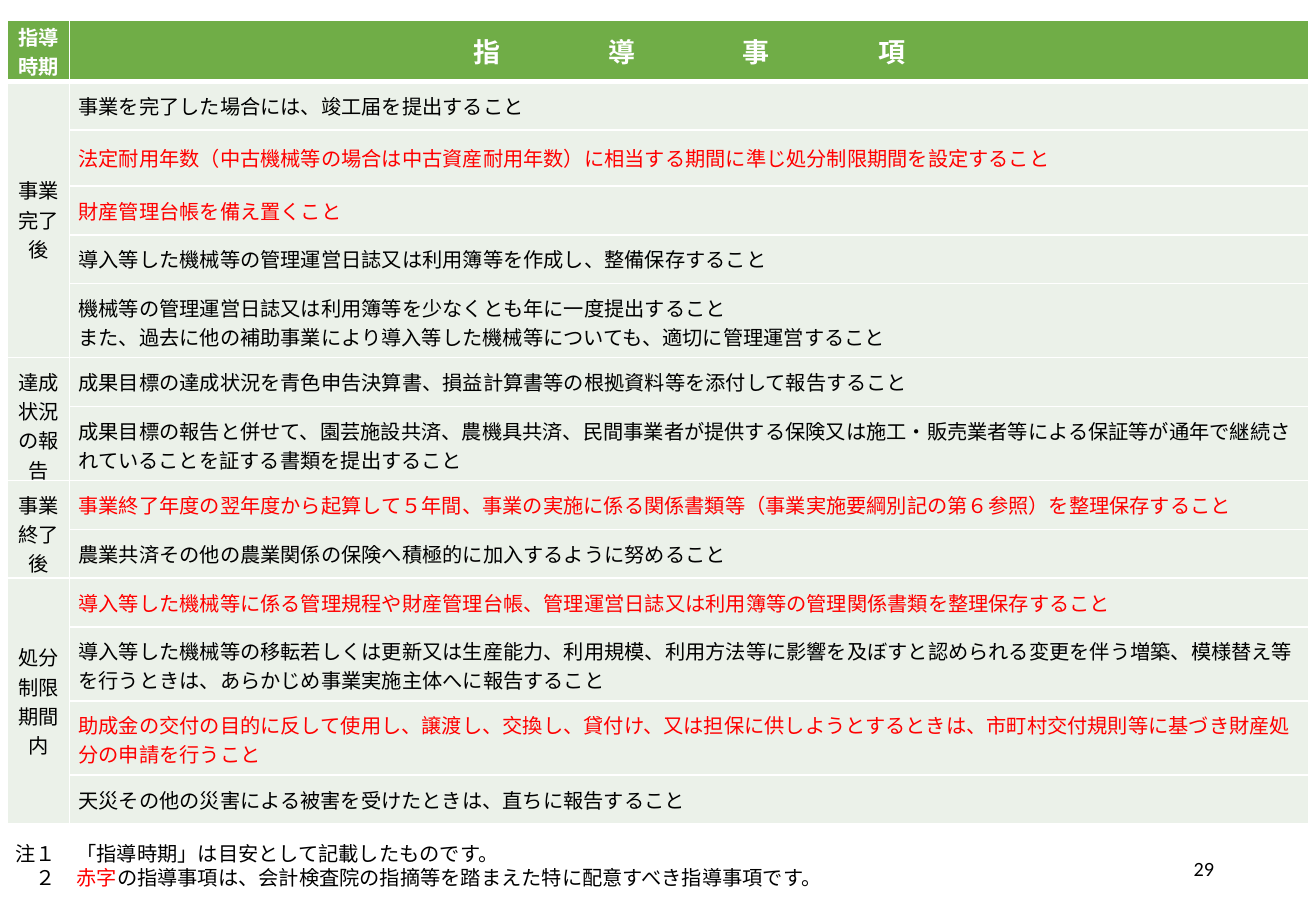
from lxml.etree import SubElement
from pptx import Presentation
from pptx.dml.color import RGBColor
from pptx.enum.text import MSO_ANCHOR, PP_ALIGN
from pptx.oxml.ns import qn
from pptx.util import Cm, Pt

BLACK, RED, WHITE = "000000", "FF0000", "FFFFFF"
GREEN, PALE = "70AD47", "EBF1E9"
JAPANESE = "Noto Sans CJK JP"
ONE_LINE, TWO_LINES = 1.02, 1.55

SECTIONS = [
    (["事業完了後"], [
        ("事業を完了した場合には、竣工届を提出すること", BLACK, ONE_LINE),
        ("法定耐用年数（中古機械等の場合は中古資産耐用年数）に相当する期間に準じ処分制限期間を設定すること", RED, 1.17),
        ("財産管理台帳を備え置くこと", RED, ONE_LINE),
        ("導入等した機械等の管理運営日誌又は利用簿等を作成し、整備保存すること", BLACK, ONE_LINE),
        ("機械等の管理運営日誌又は利用簿等を少なくとも年に一度提出すること\n"
         "また、過去に他の補助事業により導入等した機械等についても、適切に管理運営すること", BLACK, TWO_LINES),
    ]),
    (["達成状況", "の報告"], [
        ("成果目標の達成状況を青色申告決算書、損益計算書等の根拠資料等を添付して報告すること", BLACK, ONE_LINE),
        ("成果目標の報告と併せて、園芸施設共済、農機具共済、民間事業者が提供する保険又は施工・販売業者等による"
         "保証等が通年で継続されていることを証する書類を提出すること", BLACK, TWO_LINES),
    ]),
    (["事業", "終了後"], [
        ("事業終了年度の翌年度から起算して５年間、事業の実施に係る関係書類等（事業実施要綱別記の第６参照）を整理保存すること", RED, ONE_LINE),
        ("農業共済その他の農業関係の保険へ積極的に加入するように努めること", BLACK, ONE_LINE),
    ]),
    (["処分制限期間内"], [
        ("導入等した機械等に係る管理規程や財産管理台帳、管理運営日誌又は利用簿等の管理関係書類を整理保存すること", RED, ONE_LINE),
        ("導入等した機械等の移転若しくは更新又は生産能力、利用規模、利用方法等に影響を及ぼすと認められる変更を伴う"
         "増築、模様替え等を行うときは、あらかじめ事業実施主体へに報告すること", BLACK, TWO_LINES),
        ("助成金の交付の目的に反して使用し、譲渡し、交換し、貸付け、又は担保に供しようとするときは、"
         "市町村交付規則等に基づき財産処分の申請を行うこと", RED, TWO_LINES),
        ("天災その他の災害による被害を受けたときは、直ちに報告すること", BLACK, ONE_LINE),
    ]),
]


def color(value):
    return RGBColor.from_string(value)


def add_text(paragraph, text, size=12, fill=BLACK, bold=False, font="Calibri", spacing=0):
    for index, line in enumerate(text.split("\n")):
        if index:
            paragraph.add_line_break()
        run = paragraph.add_run()
        run.text = line
        run.font.size = Pt(size)
        run.font.bold = bold
        run.font.name = font
        run.font.color.rgb = color(fill)
        properties = run.font._element
        SubElement(properties, qn("a:ea")).set("typeface", JAPANESE)
        if spacing:
            properties.set("spc", str(spacing * 100))


def write_lines(frame, lines, align=PP_ALIGN.LEFT, **text_format):
    for index, line in enumerate(lines):
        paragraph = frame.add_paragraph() if index else frame.paragraphs[0]
        paragraph.alignment = align
        add_text(paragraph, line, **text_format)


def add_box(slide, left, top, width, height, anchor=MSO_ANCHOR.TOP):
    frame = slide.shapes.add_textbox(Cm(left), Cm(top), Cm(width), Cm(height)).text_frame
    frame.word_wrap = True
    frame.vertical_anchor = anchor
    return frame


def format_cell(cell, fill, margin, top=1, bottom=1):
    properties = cell._tc.get_or_add_tcPr()
    for side, width in (("L", 1), ("R", 1), ("T", top), ("B", bottom)):
        border = SubElement(properties, qn(f"a:ln{side}"), w=str(Pt(width)))
        SubElement(SubElement(border, qn("a:solidFill")), qn("a:srgbClr"), val=WHITE)
    cell.fill.solid()
    cell.fill.fore_color.rgb = color(fill)
    cell.vertical_anchor = MSO_ANCHOR.MIDDLE
    cell.margin_left = cell.margin_right = Cm(margin)
    cell.margin_top = cell.margin_bottom = Cm(margin)


def add_header(table):
    period, items = table.cell(0, 0), table.cell(0, 1)
    for cell in (period, items):
        format_cell(cell, GREEN, 0, bottom=3)
    write_lines(period.text_frame, ["指導", "時期"], PP_ALIGN.CENTER, fill=WHITE, bold=True)
    paragraph = items.text_frame.paragraphs[0]
    paragraph.alignment = PP_ALIGN.CENTER
    add_text(paragraph, "指導事", size=16, fill=WHITE, bold=True, spacing=64)
    add_text(paragraph, "項", size=16, fill=WHITE, bold=True)


def add_section(table, first, period, items):
    for row, (text, fill, height) in enumerate(items, first):
        table.rows[row].height = Cm(height)
        for column in range(2):
            format_cell(table.cell(row, column), PALE, 0.19, top=3 if row == 1 else 1)
        write_lines(table.cell(row, 1).text_frame, [text], fill=fill)
    cell = table.cell(first, 0)
    cell.merge(table.cell(first + len(items) - 1, 0))
    cell._tc.get_or_add_tcPr().set("vert", "eaVert")
    write_lines(cell.text_frame, period, PP_ALIGN.CENTER)


def add_guidance_table(slide):
    count = 1 + sum(len(items) for _, items in SECTIONS)
    table = slide.shapes.add_table(count, 2, Cm(0.15), Cm(0.43), Cm(27.21), Cm(16.79)).table
    table.columns[0].width = Cm(1.3)
    table.columns[1].width = Cm(25.91)
    table.rows[0].height = Cm(1.27)
    add_header(table)
    first = 1
    for period, items in SECTIONS:
        add_section(table, first, period, items)
        first += len(items)


def add_notes(slide):
    frame = add_box(slide, 0.08, 17.48, 26.8, 1.27)
    write_lines(frame, ["注１　「指導時期」は目安として記載したものです。", "　２　"], font=JAPANESE)
    second = frame.paragraphs[1]
    add_text(second, "赤字", fill=RED, font=JAPANESE)
    add_text(second, "の指導事項は、会計検査院の指摘等を踏まえた特に配意すべき指導事項です。", font=JAPANESE)
    for paragraph in frame.paragraphs:
        paragraph.line_spacing = Pt(14.2)


def main():
    presentation = Presentation()
    presentation.slide_width, presentation.slide_height = Cm(27.51), Cm(19.05)
    slide = presentation.slides.add_slide(presentation.slide_layouts[6])
    add_notes(slide)
    add_guidance_table(slide)
    page_number = add_box(slide, 19.43, 17.65, 6.2, 1.02, MSO_ANCHOR.MIDDLE)
    write_lines(page_number, ["29"], PP_ALIGN.RIGHT)
    presentation.save("out.pptx")


if __name__ == "__main__":
    main()
